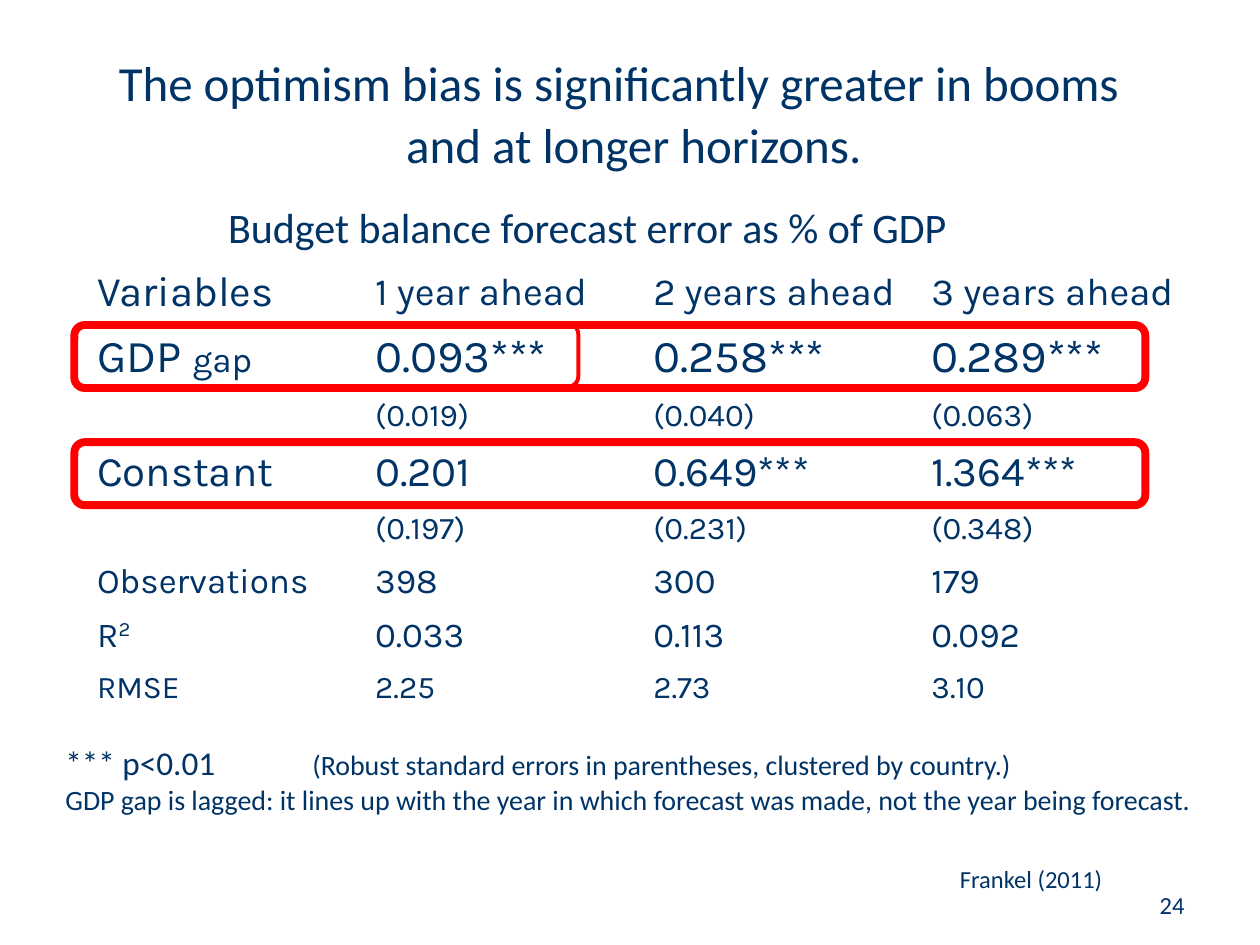
"""Builds the slide on optimism bias in budget balance forecasts."""
from lxml import etree
from pptx import Presentation
from pptx import util as u
from pptx.dml import color
from pptx.enum import shapes, text
from pptx.oxml import ns

INK, RED, WHITE = "003366", "FF0000", "FFFFFF"

deck = Presentation()
deck.slide_width, deck.slide_height = u.Inches(10), u.Inches(7.5)
column, row = deck.slide_width / 100, deck.slide_height / 75


def place(left, top, width, height):
    return [u.Emu(round(n * step)) for n, step in zip((left, top, width, height), (column, row) * 2)]


def write(para, words, size, face="Calibri"):
    for part in words:
        para.add_run().text = part
    para.font.size, para.font.name = u.Pt(size), face
    para.font.color.rgb = color.RGBColor.from_string(INK)
    return para


page = deck.slides.add_slide(deck.slide_layouts[5])

title = page.shapes.title
title.left, title.top, title.width, title.height = place(5, 3.4, 88.2, 10.7)
frame = title.text_frame
frame.auto_size, frame.vertical_anchor = text.MSO_AUTO_SIZE.NONE, text.MSO_ANCHOR.TOP
lines = ["The optimism bias is significantly greater in booms", "and at longer horizons."]
for number, line in enumerate(lines):
    para = frame.add_paragraph() if number else frame.paragraphs[0]
    write(para, [line], 28).alignment = text.PP_ALIGN.CENTER
    para.line_spacing = u.Pt(35.5)
para._p.get_or_add_pPr().set("marL", str(round(2.4 * column)))

results = [
    (5, 24, "Variables", "1 year ahead", "2 years ahead", "3 years ahead"),
    (5.3, 26, "GDP gap", "0.093***", "0.258***", "0.289***"),
    (4, 18, "", "(0.019)", "(0.040)", "(0.063)"),
    (5, 24, "Constant", "0.201", "0.649***", "1.364***"),
    (4, 18, "", "(0.197)", "(0.231)", "(0.348)"),
    (4.3, 20, "Observations", "398", "300", "179"),
    (4.3, 20, "R2", "0.033", "0.113", "0.092"),
    (4, 18, "RMSE", "2.25", "2.73", "3.10"),
]
table = page.shapes.add_table(len(results), 4, *place(6.7, 20.7, 88.3, 36)).table
table.first_row = table.horz_banding = False
mixed = {"GDP gap": ["GDP ", "gap"], "R2": ["R", "2"]}
for r, (height, size, *values) in enumerate(results):
    table.rows[r].height = u.Emu(round(height * row))
    for c, value in enumerate(values):
        cell = table.cell(r, c)
        cell.fill.background()
        cell.vertical_anchor = text.MSO_ANCHOR.MIDDLE
        cell_size = 22 if r == 0 and c else size
        write(cell.text_frame.paragraphs[0], mixed.get(value, [value] if value else []), cell_size, "Karla")
table.cell(1, 0).text_frame.paragraphs[0].runs[1].font.size = u.Pt(20)
table.cell(6, 0).text_frame.paragraphs[0].runs[1]._r.get_or_add_rPr().set("baseline", "30000")

panels = [
    ((18, 15.9, 65.9, 4.2), [(["Budget balance forecast error as % of GDP"], 24)]),
    ((5.1, 58.8, 91.3, 6.1), [
        (["*** p<0.01\t", "(Robust standard errors in parentheses, clustered by country.)"], 19),
        (["GDP gap is lagged: it lines up with the year in which forecast was made, "
          "not the year being forecast."], 16),
    ]),
]
for area, paras in panels:
    panel = page.shapes.add_shape(shapes.MSO_SHAPE.RECTANGLE, *place(*area))
    panel.shadow.inherit = False
    panel.fill.solid()
    panel.fill.fore_color.rgb = color.RGBColor.from_string(WHITE)
    panel.line.fill.background()
    frame = panel.text_frame
    frame.word_wrap, frame.vertical_anchor = True, text.MSO_ANCHOR.MIDDLE
    frame.margin_left = frame.margin_right = frame.margin_top = frame.margin_bottom = u.Inches(0.01)
    for number, (words, size) in enumerate(paras):
        para = frame.add_paragraph() if number else frame.paragraphs[0]
        write(para, words, size).alignment = text.PP_ALIGN.LEFT

note = frame.paragraphs[0]
note.runs[1].font.size = u.Pt(16)
tabs = etree.Element(ns.qn("a:tabLst"))
etree.SubElement(tabs, ns.qn("a:tab"), pos=str(round(19.6 * column)), algn="l")
note._p.get_or_add_pPr().insert(0, tabs)

for top, width, weight in [(25.8, 85, 4.5), (25.7, 40, 2.25), (35.1, 85, 4.5)]:
    outline = page.shapes.add_shape(shapes.MSO_SHAPE.ROUNDED_RECTANGLE, *place(5.9, top, width, 5))
    outline.shadow.inherit = False
    outline.fill.background()
    outline.line.color.rgb = color.RGBColor.from_string(RED)
    outline.line.width = u.Pt(weight)

captions = [
    ((75.2, 68.1, 15, 4), "Frankel (2011)", text.PP_ALIGN.LEFT, text.MSO_ANCHOR.TOP),
    ((71.7, 68.3, 23.3, 5.2), "24", text.PP_ALIGN.RIGHT, text.MSO_ANCHOR.BOTTOM),
]
for area, words, alignment, anchor in captions:
    box = page.shapes.add_textbox(*place(*area))
    box.text_frame.word_wrap, box.text_frame.vertical_anchor = True, anchor
    write(box.text_frame.paragraphs[0], [words], 14).alignment = alignment

deck.save("out.pptx")
